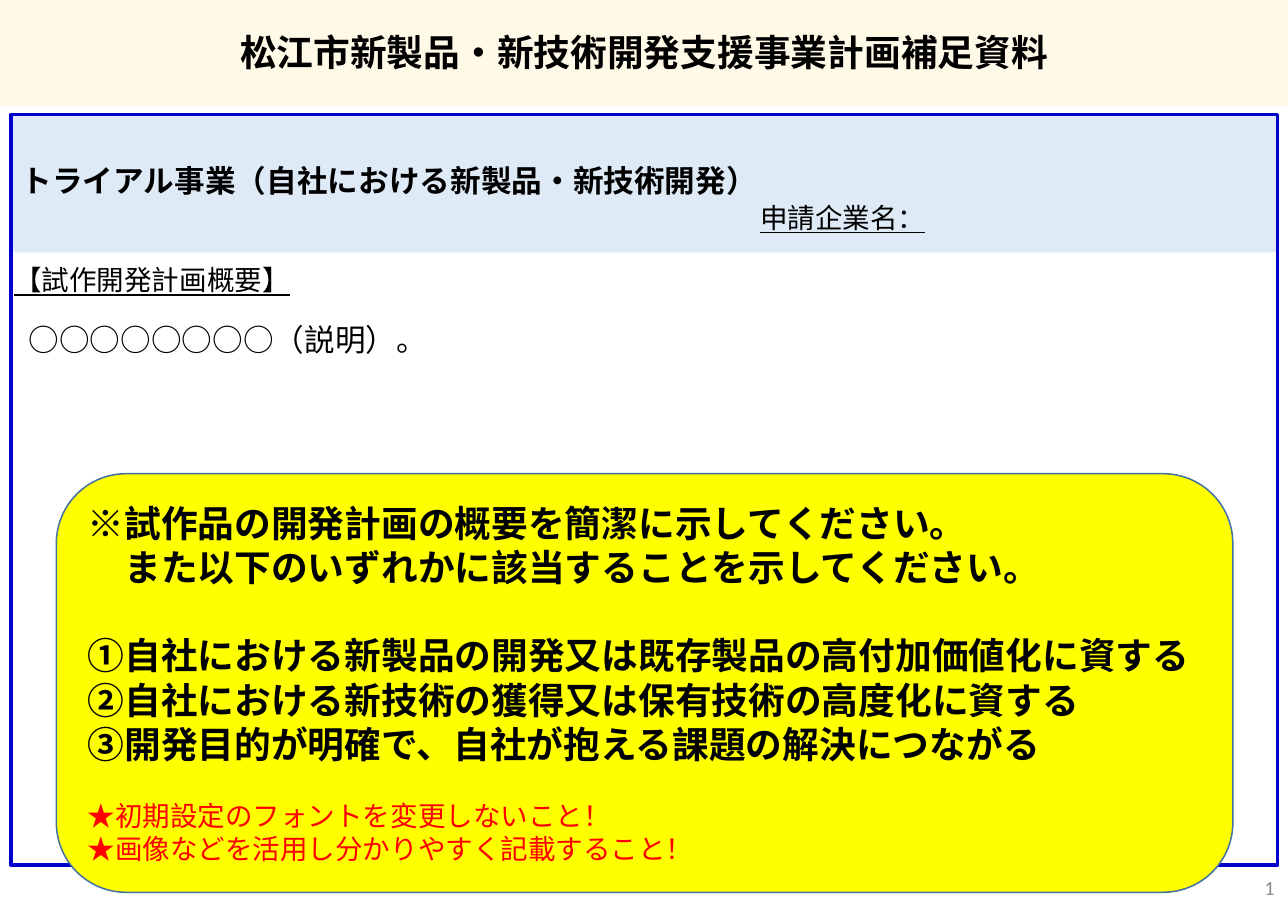
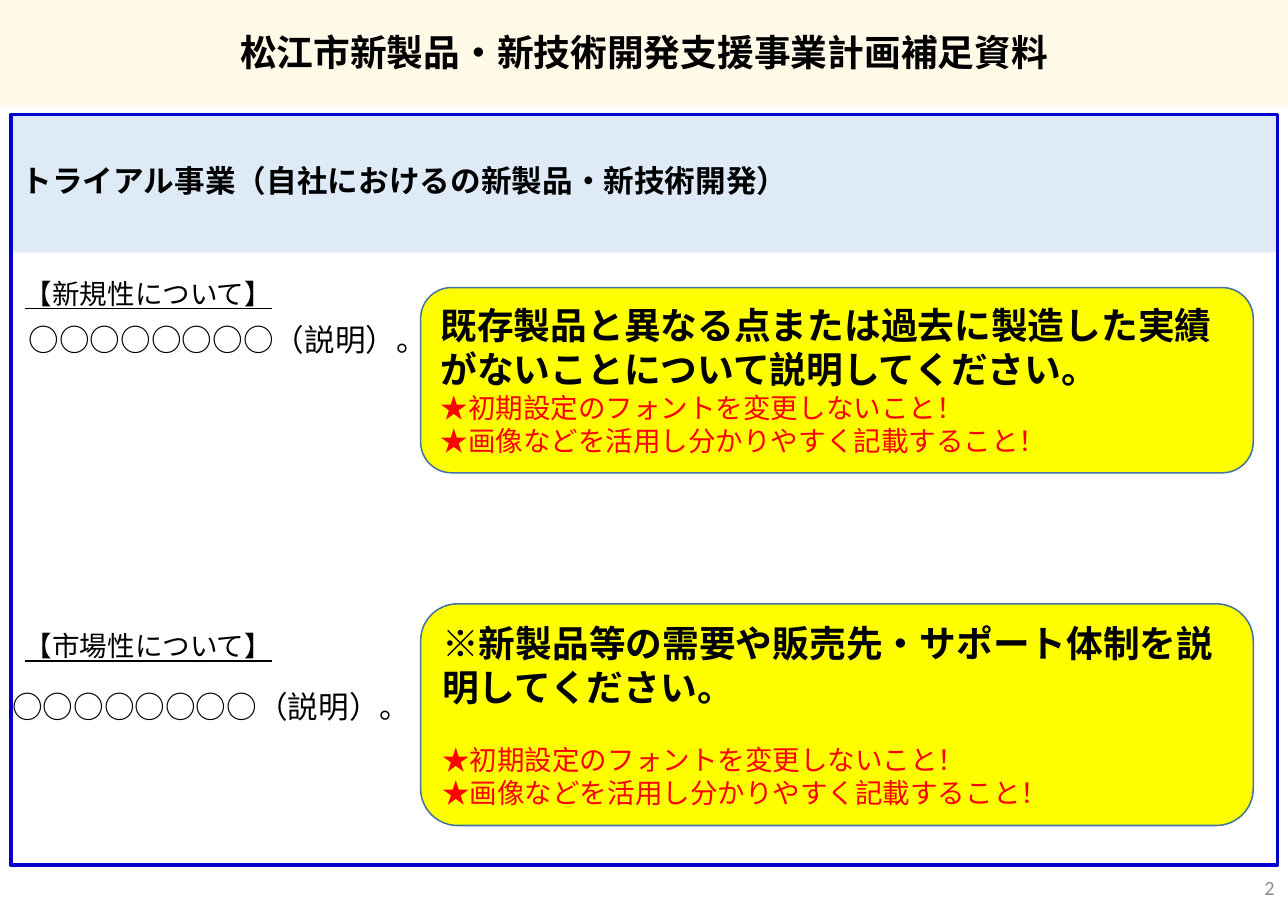
from pptx import Presentation
from pptx.dml.color import RGBColor
from pptx.enum.shapes import MSO_SHAPE as Preset
from pptx.enum.text import MSO_ANCHOR as Anchor, PP_ALIGN as Align
from pptx.oxml import parse_xml
from pptx.oxml.ns import nsdecls, qn
from pptx.util import Cm, Pt

COLORS = {
    "ink": "000000", "warning": "FF0000", "number": "8C8C8C",
    "title_band": "FFF9E7", "header_band": "DEEBF7", "frame": "0000CC",
    "callout": "FFFF00", "callout_line": "43739E",
}
JAPANESE = "Noto Sans CJK JP"
PAGE = (29.7, 21)
TITLE = "松江市新製品・新技術開発支援事業計画補足資料"
EXPLANATION = "○○○○○○○○（説明）。"
WARNINGS = ["★初期設定のフォントを変更しないこと！", "★画像などを活用し分かりやすく記載すること！"]

SLIDES = [
    {
        "header": "トライアル事業（自社における新製品・新技術開発）",
        "labels": [
            ("【試作開発計画概要】", (0, 5.94, 6.93, 1.02)),
            ("申請企業名：", (17.22, 4.5, 4.37, 1.02)),
        ],
        "explanations": [(0.25, 7.26)],
        "callouts": [{
            "box": (1.3, 10.92, 27.13, 9.65),
            "lines": [
                {"text": "※試作品の開発計画の概要を簡潔に示してください。"},
                {"text": "また以下のいずれかに該当することを示してください。", "indent": 24},
                {"text": "①自社における新製品の開発又は既存製品の高付加価値化に資する", "before": 29},
                {"text": "②自社における新技術の獲得又は保有技術の高度化に資する"},
                {"text": "③開発目的が明確で、自社が抱える課題の解決につながる"},
            ],
            "warning_gap": 22,
        }],
    },
    {
        "header": "トライアル事業（自社におけるの新製品・新技術開発）",
        "labels": [
            ("【新規性について】", (0.25, 6.25, 6.27, 1.02)),
            ("【市場性について】", (0.25, 14.38, 6.27, 1.02)),
        ],
        "explanations": [(0.25, 7.26), (-0.13, 15.72)],
        "callouts": [
            {
                "box": (9.7, 6.63, 19.2, 4.27),
                "lines": [{"text": "既存製品と異なる点または過去に製造した実績がないことについて説明してください。"}],
                "warning_gap": 0,
            },
            {
                "box": (9.7, 13.92, 19.2, 5.11),
                "lines": [{"text": "※新製品等の需要や販売先・サポート体制を説明してください。"}],
                "warning_gap": 22,
            },
        ],
    },
]


def rgb(name):
    return RGBColor.from_string(COLORS[name])


def add_box(slide, box, fill=None, line=None, width=1, preset=Preset.RECTANGLE):
    shape = slide.shapes.add_shape(preset, *map(Cm, box))
    shape.shadow.inherit = False
    if fill:
        shape.fill.solid()
        shape.fill.fore_color.rgb = rgb(fill)
    else:
        shape.fill.background()
    if line:
        shape.line.color.rgb = rgb(line)
        shape.line.width = Pt(width)
    else:
        shape.line.fill.background()
    return shape


def set_frame(shape, insets=(0.25, 0.13, 0.25, 0.13), anchor=Anchor.MIDDLE, wrap=True):
    frame = shape.text_frame
    frame.margin_left, frame.margin_top, frame.margin_right, frame.margin_bottom = map(Cm, insets)
    frame.vertical_anchor = anchor
    frame.word_wrap = wrap
    return frame


def add_run(paragraph, text, size, font=JAPANESE, color="ink", bold=False, underline=False):
    run = paragraph.add_run()
    run.text = text
    run.font.size = Pt(size)
    run.font.name = font
    run.font.color.rgb = rgb(color)
    run.font.bold = bold
    run.font.underline = underline
    if font == JAPANESE:
        latin = run.font._element.find(qn("a:latin"))
        latin.addnext(parse_xml(f'<a:ea {nsdecls("a")} typeface="{font}"/>'))
    return run


def add_header(slide, text):
    frame = set_frame(add_box(slide, (0.25, 2.62, 29.21, 3.2), "header_band"), (0.25, 0, 0.25, 0))
    paragraph = frame.paragraphs[0]
    paragraph.alignment = Align.LEFT
    paragraph.line_spacing = 0.9
    add_run(paragraph, text, 20, "Arial", bold=True)


def add_title(slide):
    frame = set_frame(add_box(slide, (0, 0, PAGE[0], 2.46), "title_band"), (0.25, 0.2, 0.25, 0.13))
    paragraph = frame.paragraphs[0]
    paragraph.alignment = Align.CENTER
    paragraph.line_spacing = 0.9
    paragraph.space_before = Pt(11)
    add_run(paragraph, TITLE, 24, bold=True)


def add_explanation(slide, left, top):
    text_box = slide.shapes.add_textbox(*map(Cm, (left, top, 28.85, 2.08)))
    paragraph = set_frame(text_box, (0.41, 0.13, 0, 0.13), Anchor.TOP).paragraphs[0]
    paragraph.space_before = Pt(11)
    add_run(paragraph, EXPLANATION, 20)


def add_right_text(slide, box):
    text_box = slide.shapes.add_textbox(*map(Cm, box))
    paragraph = set_frame(text_box, wrap=False).paragraphs[0]
    paragraph.alignment = Align.RIGHT
    return paragraph


def add_number(slide, number):
    paragraph = add_right_text(slide, (28.88, 20.02, 0.76, 0.86))
    run = add_run(paragraph, str(number), 13.2, "Calibri", "number")
    field = parse_xml(
        f'<a:fld {nsdecls("a")} id="{{B6F15528-21DE-4FAA-801E-634DDDAF4B2B}}" type="slidenum"/>'
    )
    run._r.addprevious(field)
    field.extend(list(run._r))
    paragraph._p.remove(run._r)


def add_callout(slide, callout):
    shape = add_box(slide, callout["box"], "callout", "callout_line", preset=Preset.ROUNDED_RECTANGLE)
    frame = set_frame(shape)
    lines = [{"size": 24, "bold": True, "color": "ink", **line} for line in callout["lines"]]
    for index, warning in enumerate(WARNINGS):
        gap = 0 if index else callout["warning_gap"]
        lines.append({"text": warning, "size": 18, "bold": False, "color": "warning", "before": gap})
    for index, line in enumerate(lines):
        paragraph = frame.add_paragraph() if index else frame.paragraphs[0]
        paragraph.alignment = Align.LEFT
        paragraph.space_before = Pt(line.get("before", 0))
        if "indent" in line:
            paragraph._p.get_or_add_pPr().set("marL", str(Pt(line["indent"])))
        add_run(paragraph, line["text"], line["size"], "Calibri", line["color"], line["bold"])


def main():
    presentation = Presentation()
    presentation.slide_width, presentation.slide_height = map(Cm, PAGE)
    for number, content in enumerate(SLIDES, 1):
        slide = presentation.slides.add_slide(presentation.slide_layouts[6])
        add_header(slide, content["header"])
        for position in content["explanations"]:
            add_explanation(slide, *position)
        add_box(slide, (0.25, 2.64, 29.21, 17.3), line="frame", width=2.25)
        add_title(slide)
        add_number(slide, number)
        for text, box in content["labels"]:
            add_run(add_right_text(slide, box), text, 18, underline=True)
        for callout in content["callouts"]:
            add_callout(slide, callout)
    presentation.save("out.pptx")


if __name__ == "__main__":
    main()
